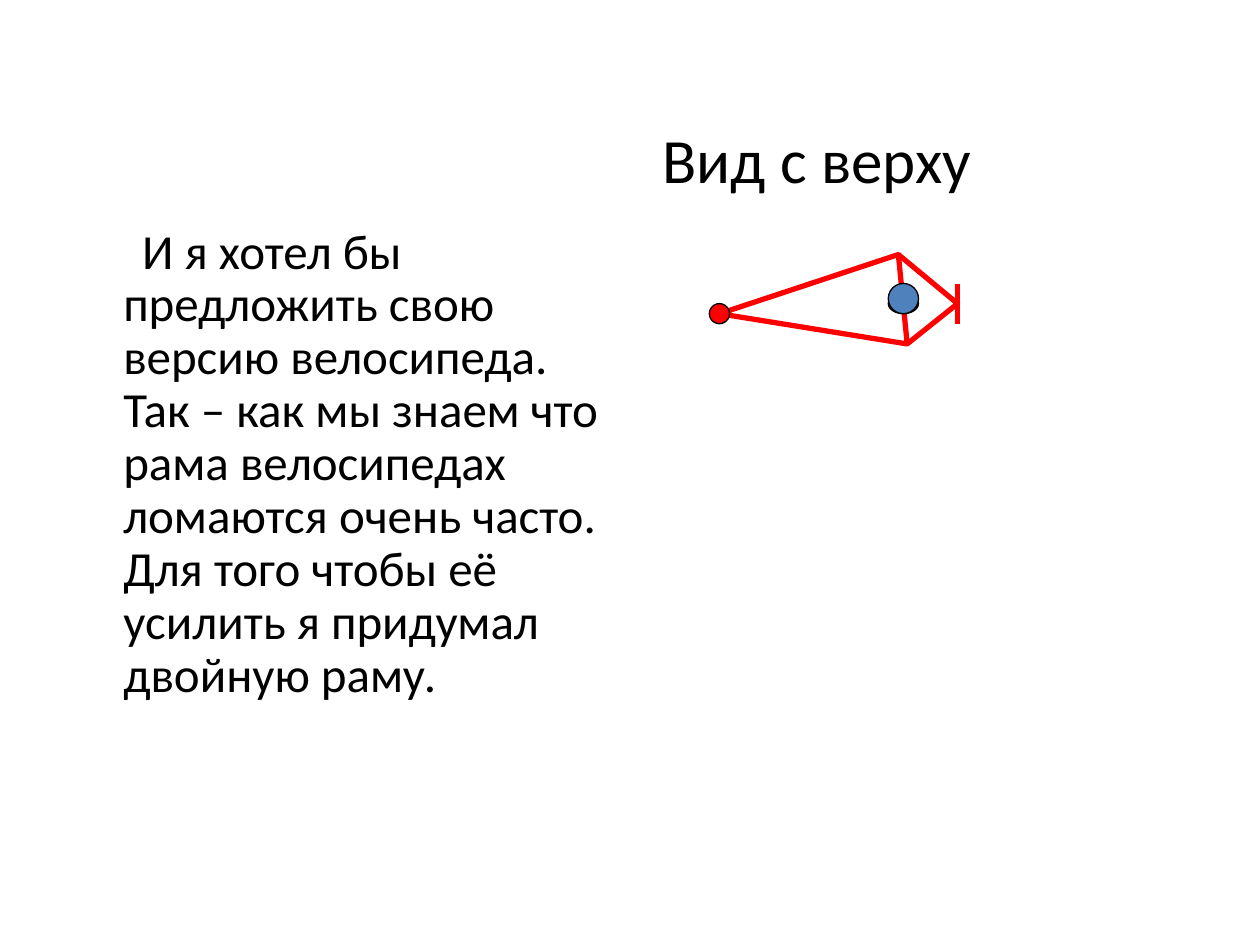
from pptx import Presentation
from pptx.dml.color import RGBColor
from pptx.enum.shapes import MSO_CONNECTOR, MSO_SHAPE
from pptx.enum.text import MSO_ANCHOR, MSO_AUTO_SIZE, PP_ALIGN
from pptx.oxml import parse_xml
from pptx.oxml.ns import nsdecls
from pptx.util import Inches, Pt

BLACK = RGBColor(0x00, 0x00, 0x00)
RED = RGBColor(0xFF, 0x00, 0x00)
BLUE = RGBColor(0x4F, 0x81, 0xBD)

# Content
HEADING = "Вид с верху"
PROPOSAL = (
    "И я хотел бы предложить свою версию велосипеда. "
    "Так – как мы знаем что рама велосипедах ломаются очень часто. "
    "Для того чтобы её усилить я придумал двойную раму."
)

# Bicycle frame seen from above: joints in inches
FRONT, LEFT, REAR, RIGHT = (5.71, 2.49), (7.13, 2.02), (7.6, 2.41), (7.2, 2.73)
AXLE_TOP, AXLE_BOTTOM = (7.6, 2.25), (7.6, 2.57)
# Round parts: left, top, width, height, colour
FRONT_HUB = (5.63, 2.41, 0.16, 0.16, RED)
SEAT_POST = (7.05, 2.33, 0.24, 0.16, RED)
SEAT = (7.05, 2.25, 0.24, 0.24, BLUE)


def write(box, text, size, margin=0, indent=0, line_spacing=1.0, space_before=0):
    frame = box.text_frame
    frame.word_wrap = True
    frame.auto_size = MSO_AUTO_SIZE.NONE
    frame.vertical_anchor = MSO_ANCHOR.TOP
    paragraph = frame.paragraphs[0]
    paragraph.alignment = PP_ALIGN.LEFT
    paragraph.line_spacing = line_spacing
    paragraph.space_before = Pt(space_before)
    properties = paragraph._p.get_or_add_pPr()
    properties.set("marL", str(Inches(margin)))
    properties.set("indent", str(Inches(indent)))
    run = paragraph.add_run()
    run.text = text
    run.font.name = "Calibri"
    run.font.size = Pt(size)
    run.font.color.rgb = BLACK


def style_line(line, color, width):
    line.color.rgb = color
    line.width = Pt(width)


def add_bar(shapes, start, end):
    bar = shapes.add_connector(
        MSO_CONNECTOR.STRAIGHT, *(Inches(v) for v in start + end))
    style_line(bar.line, RED, 3)
    bar._element.spPr.append(parse_xml(f"<a:effectLst {nsdecls('a')}/>"))


def add_round_part(shapes, left, top, width, height, color):
    part = shapes.add_shape(
        MSO_SHAPE.OVAL, *(Inches(v) for v in (left, top, width, height)))
    part.shadow.inherit = False
    part.fill.solid()
    part.fill.fore_color.rgb = color
    style_line(part.line, BLACK, 0.75)


def add_frame(shapes, joints):
    points = [(Inches(x), Inches(y)) for x, y in joints]
    builder = shapes.build_freeform(*points[0])
    builder.add_line_segments(points[1:], close=True)
    outline = builder.convert_to_shape()
    outline.shadow.inherit = False
    outline.fill.background()
    style_line(outline.line, RED, 3)


def main():
    deck = Presentation()
    deck.slide_width, deck.slide_height = Inches(10), Inches(7.5)
    slide = deck.slides.add_slide(deck.slide_layouts[5])
    shapes = slide.shapes

    # Heading
    heading = shapes.title
    heading.left, heading.top = Inches(5.16), Inches(0.91)
    heading.width, heading.height = Inches(3.8), Inches(0.7)
    write(heading, HEADING, 36)

    # Proposal
    proposal = shapes.add_textbox(
        Inches(0.5), Inches(1.75), Inches(4.42), Inches(4.92))
    write(proposal, PROPOSAL, 28, margin=0.38, indent=0.15,
          line_spacing=0.9, space_before=5.6)

    # Double frame, from back to front
    add_frame(shapes, [FRONT, LEFT, REAR, RIGHT])
    add_bar(shapes, LEFT, RIGHT)
    add_round_part(shapes, *FRONT_HUB)
    add_round_part(shapes, *SEAT_POST)
    add_bar(shapes, AXLE_TOP, AXLE_BOTTOM)
    add_round_part(shapes, *SEAT)

    deck.save("out.pptx")


if __name__ == "__main__":
    main()
